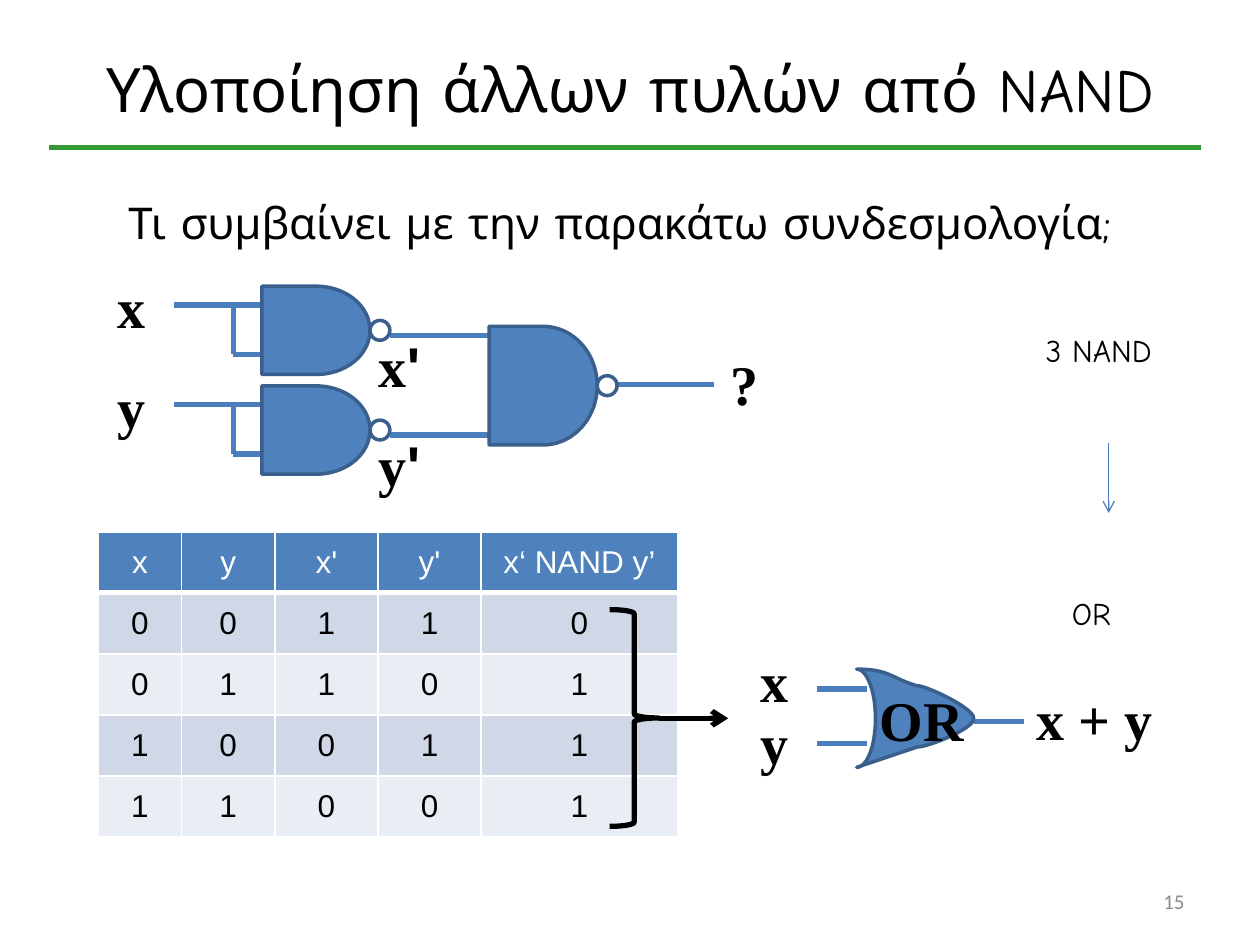
"""Build the slide on making other gates out of NAND gates."""
from dataclasses import dataclass

from lxml.etree import SubElement
from pptx import Presentation
from pptx.dml.color import RGBColor
from pptx.enum.shapes import MSO_CONNECTOR, MSO_SHAPE
from pptx.enum.text import MSO_ANCHOR, MSO_AUTO_SIZE, PP_ALIGN
from pptx.oxml.ns import qn
from pptx.util import Cm, Pt


@dataclass(frozen=True)
class Theme:
    black: str = "000000"
    white: str = "FFFFFF"
    gray: str = "8C8C8C"
    green: str = "339933"
    gate: str = "4F81BD"
    outline: str = "3A5F8C"
    wire: str = "4B7EBC"
    bands: tuple = ("D0D8E8", "E9EDF4")
    heading: str = "Comic Neue"
    symbol: str = "Times New Roman"
    body: str = "Arial"
    footer: str = "Calibri"
    title_size: int = 35
    question_size: int = 25
    symbol_size: int = 32
    body_size: int = 18
    footer_size: int = 12


theme = Theme()
deck = Presentation()
deck.slide_width, deck.slide_height = Cm(25.4), Cm(19.05)
page = deck.slides.add_slide(deck.slide_layouts[6])


def add_line(start, end, color=theme.wire, width=3, arrow=False):
    line = page.shapes.add_connector(MSO_CONNECTOR.STRAIGHT, *map(Cm, start + end))
    line.line.color.rgb = RGBColor.from_string(color)
    line.line.width = Pt(width)
    properties = line._element.spPr
    if arrow:
        SubElement(properties.find(qn("a:ln")), qn("a:tailEnd"), type="arrow")
    SubElement(properties, qn("a:effectLst"))


def add_text(frame, spans, size, color=theme.black, bold=False, **layout):
    para = frame.paragraphs[0]
    para.alignment = layout.pop("alignment", PP_ALIGN.LEFT)
    for name, value in layout.items():
        setattr(frame, name, value)
    for text, font in spans:
        span = para.add_run()
        span.text = text
        for name, value in {"name": font, "size": Pt(size), "bold": bold}.items():
            setattr(span.font, name, value)
        span.font.color.rgb = RGBColor.from_string(color)


columns = [1.68, 1.88, 2.08, 2.08, 3.96]
rows = [["x", "y", "x'", "y'", "x‘ NAND y’"]]
for x in (0, 1):
    for y in (0, 1):
        rows.append([x, y, 1 - x, 1 - y, x | y])
table = page.shapes.add_table(
    len(rows), len(columns), Cm(1.98), Cm(10.72), Cm(sum(columns)), Cm(6.15)).table
table.first_row = table.horz_banding = False
for column, width in zip(table.columns, columns):
    column.width = Cm(width)
for number, values in enumerate(rows):
    table.rows[number].height = Cm(1.23)
    for column, value in enumerate(values):
        cell = table.cell(number, column)
        for side in "LRTB":
            thick = (number, side) in ((0, "B"), (1, "T"))
            border = SubElement(cell._tc.get_or_add_tcPr(), qn(f"a:ln{side}"),
                                w=str(Pt(3 if thick else 1)))
            SubElement(SubElement(border, qn("a:solidFill")), qn("a:srgbClr"), val=theme.white)
        cell.fill.solid()
        cell.fill.fore_color.rgb = RGBColor.from_string(
            theme.bands[(number - 1) % 2] if number else theme.gate)
        cell.vertical_anchor = MSO_ANCHOR.MIDDLE
        add_text(cell.text_frame, [(str(value), theme.body)], theme.body_size,
                 theme.black if number else theme.white, alignment=PP_ALIGN.CENTER)

add_line((0.99, 2.97), (24.21, 2.97), theme.green)
center, right = PP_ALIGN.CENTER, PP_ALIGN.RIGHT
for place, text, font, size, color, alignment in [
    ((1.27, 0.76, 22.86, 2.01), "Υλοποίηση άλλων πυλών από NAND",
     theme.heading, theme.title_size, theme.black, center),
    ((0.99, 3.58, 23.01, 1.78), "Τι συμβαίνει με την παρακάτω συνδεσμολογία;",
     theme.heading, theme.question_size, theme.black, center),
    ((18.21, 17.65, 5.92, 1.02), "15",
     theme.footer, theme.footer_size, theme.gray, right),
]:
    box = page.shapes.add_textbox(*map(Cm, place))
    add_text(box.text_frame, [(text, font)], size, color, alignment=alignment,
             word_wrap=True, vertical_anchor=MSO_ANCHOR.MIDDLE)

inverter_tops = [5.77, 7.78]
for top in inverter_tops:
    upper, lower, output = top + 0.38, top + 1.37, top + 0.99
    add_line((9.86, output), (7.87, output))
    add_line((5.28, lower), (4.7, lower))
    add_line((4.7, upper), (4.7, lower))
    add_line((3.51, upper), (5.28, upper))
add_line((14.4, 7.75), (12.42, 7.75))
for y in (13.89, 14.99):
    add_line((17.48, y), (16.46, y))
add_line((20.65, 14.55), (19.63, 14.55))

or_start = (18.49, 15.06)
or_curves = [
    ((17.27, 15.47), (17.48, 15.47), (17.65, 15.04), (17.65, 14.48)),
    ((17.65, 14.48), (17.65, 13.94), (17.48, 13.49), (17.27, 13.49)),
    ((17.27, 13.49), (17.93, 13.49), (17.96, 13.67), (18.47, 13.82)),
    ((18.47, 13.82), (18.67, 13.82), (19.63, 14.27), (19.63, 14.48)),
    ((19.63, 14.48), (19.66, 14.68), (18.72, 15.06), or_start),
]
steps = 16
points = [or_curves[0][0]]
for curve in or_curves:
    for step in range(1, steps + 1):
        t = step / steps
        weights = ((1 - t) ** 3, 3 * t * (1 - t) ** 2, 3 * t ** 2 * (1 - t), t ** 3)
        points.append(tuple(sum(w * c for w, c in zip(weights, axis)) for axis in zip(*curve)))
builder = page.shapes.build_freeform(*map(Cm, or_start))
builder.add_line_segments([(Cm(x), Cm(y)) for x, y in points], close=True)
shapes = [(builder.convert_to_shape(), theme.gate, theme.outline, 2)]

for left, top, height in [(5.28, top, 1.78) for top in inverter_tops] + [(9.86, 6.58, 2.39)]:
    gate = page.shapes.add_shape(
        MSO_SHAPE.FLOWCHART_DELAY, Cm(left), Cm(top), Cm(2.18), Cm(height))
    bubble = page.shapes.add_shape(
        MSO_SHAPE.FLOWCHART_CONNECTOR, Cm(left + 2.18), Cm(top + height / 2 - 0.2),
        Cm(0.4), Cm(0.4))
    shapes += [(gate, theme.gate, theme.outline, 2), (bubble, theme.white, theme.outline, 2)]
brace = page.shapes.add_shape(MSO_SHAPE.RIGHT_BRACE, Cm(12.29), Cm(12.29), Cm(0.99), Cm(4.37))
shapes.append((brace, None, theme.black, 3))
for shape, fill, outline, width in shapes:
    shape.shadow.inherit = False
    shape.line.color.rgb = RGBColor.from_string(outline)
    shape.line.width = Pt(width)
    if fill:
        shape.fill.solid()
        shape.fill.fore_color.rgb = RGBColor.from_string(fill)
    else:
        shape.fill.background()

add_line((13.28, 14.48), (14.68, 14.48), theme.black, arrow=True)
add_line((22.35, 8.94), (22.35, 10.34), width=0.75, arrow=True)

labels = [
    ((14.48, 6.93, 0.99), "?"), ((15.09, 12.9, 1.09), "x"), ((15.09, 14.15, 1.09), "y"),
    ((20.65, 13.67, 4.17), "x + y"), ((17.48, 13.69, 2.21), "OR"),
]
symbols = [(place, [(text, theme.symbol)]) for place, text in labels]
for name, top in zip("xy", inverter_tops):
    span = (name, theme.symbol)
    symbols += [((2.11, top - 0.4, 1.09), [span]),
                ((7.39, top + 0.78, 1.47), [span, ("ʹ", theme.body)])]
notes = [((20.83, 6.55, 3.05), [("3 NAND", theme.heading)]),
         ((21.36, 11.86, 1.42), [("OR", theme.heading)])]
for group, height, size, bold in [(symbols, 1.63, theme.symbol_size, True),
                                  (notes, 1.02, theme.body_size, False)]:
    for place, spans in group:
        box = page.shapes.add_textbox(*map(Cm, place + (height,)))
        add_text(box.text_frame, spans, size, bold=bold, word_wrap=False,
                 auto_size=MSO_AUTO_SIZE.SHAPE_TO_FIT_TEXT)

deck.save("out.pptx")
